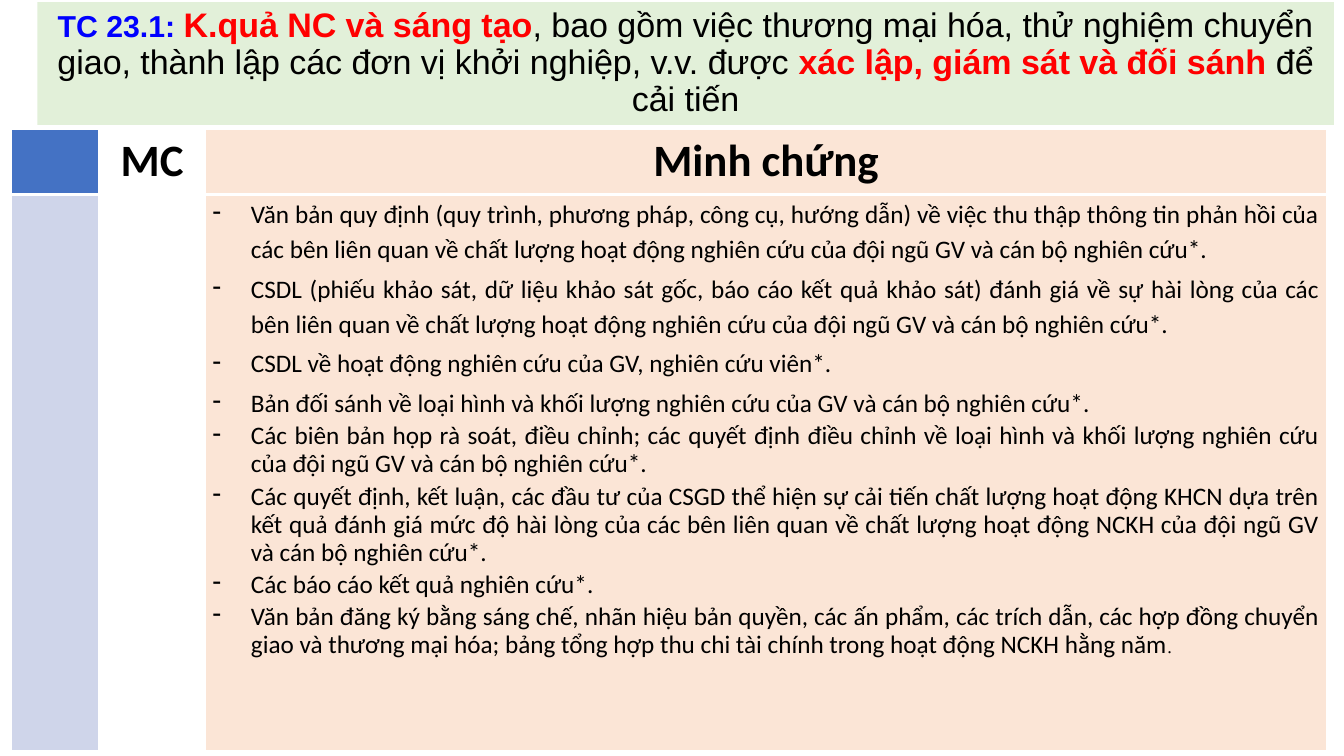
from lxml.etree import SubElement
from pptx import Presentation
from pptx.dml.color import RGBColor
from pptx.enum.text import MSO_ANCHOR, PP_ALIGN
from pptx.oxml.ns import qn
from pptx.util import Inches, Pt

COLORS = {
    "title_fill": "E2F0D9",
    "blue": "0000FF",
    "red": "FF0000",
    "black": "000000",
    "white": "FFFFFF",
    "header": "4472C4",
    "band": "CFD5EA",
    "peach": "FBE5D6",
}

TITLE = [
    ("TC 23.1: ", 21.6, "blue", True),
    ("K.quả NC và sáng tạo", 24.3, "red", True),
    (", bao gồm việc thương mại hóa, thử nghiệm chuyển giao, thành lập các đơn vị "
     "khởi nghiệp, v.v. được ", 24.3, "black", False),
    ("xác lập, giám sát và đối sánh ", 24.3, "red", True),
    ("để cải tiến", 24.3, "black", False),
]

LOOSE_EVIDENCE = [
    "Văn bản quy định (quy trình, phương pháp, công cụ, hướng dẫn) về việc thu thập "
    "thông tin phản hồi của các bên liên quan về chất lượng hoạt động nghiên cứu của "
    "đội ngũ GV và cán bộ nghiên cứu*.",
    "CSDL (phiếu khảo sát, dữ liệu khảo sát gốc, báo cáo kết quả khảo sát) đánh giá về "
    "sự hài lòng của các bên liên quan về chất lượng hoạt động nghiên cứu của đội ngũ "
    "GV và cán bộ nghiên cứu*.",
    "CSDL về hoạt động nghiên cứu của GV, nghiên cứu viên*.",
    "Bản đối sánh về loại hình và khối lượng nghiên cứu của GV và cán bộ nghiên cứu*.",
]

TIGHT_EVIDENCE = [
    "Các biên bản họp rà soát, điều chỉnh; các quyết định điều chỉnh về loại hình và "
    "khối lượng nghiên cứu của đội ngũ GV và cán bộ nghiên cứu*.",
    "Các quyết định, kết luận, các đầu tư của CSGD thể hiện sự cải tiến chất lượng hoạt "
    "động KHCN dựa trên kết quả đánh giá mức độ hài lòng của các bên liên quan về chất "
    "lượng hoạt động NCKH của đội ngũ GV và cán bộ nghiên cứu*.",
    "Các báo cáo kết quả nghiên cứu*.",
    "Văn bản đăng ký bằng sáng chế, nhãn hiệu bản quyền, các ấn phẩm, các trích dẫn, các "
    "hợp đồng chuyển giao và thương mại hóa; bảng tổng hợp thu chi tài chính trong hoạt "
    "động NCKH hằng năm",
]


def rgb(name):
    return RGBColor.from_string(COLORS[name])


def style_run(r, size, font="Calibri", color="black", bold=False):
    r.font.size = Pt(size)
    r.font.name = font
    r.font.bold = bold
    r.font.color.rgb = rgb(color)


def add_title(s):
    sp = s.shapes.add_textbox(Inches(0.37), Inches(0.02), Inches(12.86), Inches(1.22))
    sp.fill.solid()
    sp.fill.fore_color.rgb = rgb("title_fill")
    tf = sp.text_frame
    tf.word_wrap = True
    tf.vertical_anchor = MSO_ANCHOR.MIDDLE
    p = tf.paragraphs[0]
    p.alignment = PP_ALIGN.CENTER
    p.line_spacing = 0.9
    for text, size, color, bold in TITLE:
        r = p.add_run()
        r.text = text
        style_run(r, size, "Arial", color, bold)


def set_borders(cell, bottom):
    tcPr = cell._tc.get_or_add_tcPr()
    for tag, width in (("a:lnL", 1), ("a:lnR", 1), ("a:lnT", 1), ("a:lnB", bottom)):
        ln = SubElement(tcPr, qn(tag), w=str(Pt(width)))
        fill = SubElement(ln, qn("a:solidFill"))
        SubElement(fill, qn("a:srgbClr"), val=COLORS["white"])


def style_cell(cell, fill, bottom):
    set_borders(cell, bottom)
    cell.fill.solid()
    cell.fill.fore_color.rgb = rgb(fill)


def write_header(cell, text):
    p = cell.text_frame.paragraphs[0]
    p.text = text
    p.alignment = PP_ALIGN.CENTER
    style_run(p.runs[0], 32, bold=True)


def write_bullet(p, text, spacing):
    p.text = text
    p.alignment = PP_ALIGN.JUSTIFY
    p.line_spacing = spacing
    p.space_before = Pt(3)
    style_run(p.runs[0], 18)
    pPr = p._p.get_or_add_pPr()
    pPr.set("marL", str(Inches(0.38)))
    pPr.set("indent", str(Inches(-0.38)))
    SubElement(pPr, qn("a:buFontTx"))
    SubElement(pPr, qn("a:buChar"), char="-")


def write_evidence(cell):
    cell.margin_left = cell.margin_right = Inches(0.07)
    cell.margin_top = cell.margin_bottom = 0
    tf = cell.text_frame
    items = [(text, 1.15) for text in LOOSE_EVIDENCE]
    items += [(text, Pt(20)) for text in TIGHT_EVIDENCE]
    for i, (text, spacing) in enumerate(items):
        p = tf.add_paragraph() if i else tf.paragraphs[0]
        write_bullet(p, text, spacing)
    r = p.add_run()
    r.text = "."
    style_run(r, 13, "Times New Roman")


def add_evidence_table(s):
    widths, heights = (0.87, 1.06, 11.12), (0.65, 5.52)
    table = s.shapes.add_table(2, 3, Inches(0.11), Inches(1.28),
                               Inches(sum(widths)), Inches(sum(heights))).table
    for column, width in zip(table.columns, widths):
        column.width = Inches(width)
    for row, height in zip(table.rows, heights):
        row.height = Inches(height)
    fills = (("header", "white", "peach"), ("band", "white", "peach"))
    for i, (row_fills, bottom) in enumerate(zip(fills, (3, 1))):
        for j, fill in enumerate(row_fills):
            style_cell(table.cell(i, j), fill, bottom)
    write_header(table.cell(0, 1), "MC")
    write_header(table.cell(0, 2), "Minh chứng")
    write_evidence(table.cell(1, 2))


def main():
    prs = Presentation()
    prs.slide_width, prs.slide_height = Inches(13.33), Inches(7.5)
    s = prs.slides.add_slide(prs.slide_layouts[6])
    add_title(s)
    add_evidence_table(s)
    prs.save("out.pptx")


if __name__ == "__main__":
    main()
